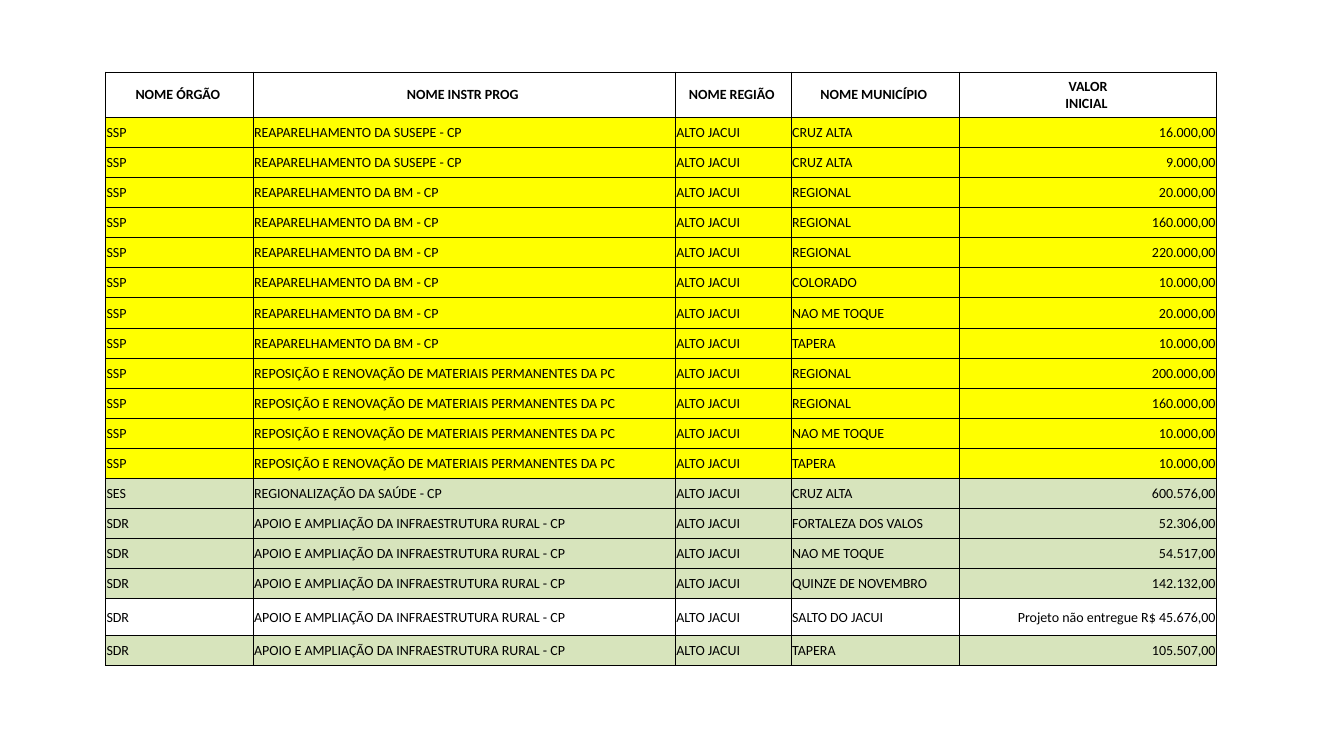
"""Builds a slide with the regional budget table of Alto Jacui."""
from dataclasses import dataclass

from lxml.etree import SubElement
from pptx import Presentation
from pptx.dml.color import RGBColor as Color
from pptx.enum.text import MSO_ANCHOR as Anchor, PP_ALIGN as Align
from pptx.oxml.ns import qn
from pptx.util import Pt


@dataclass(frozen=True)
class Theme:
    font: str = "Calibri"
    text_size: float = 10
    border_width: float = 0.5
    cell_margin: float = 0.7
    ink: str = "000000"
    security: str = "FFFF00"
    approved: str = "D7E4BC"


THEME = Theme()
REGION = "ALTO JACUI"
PRISONS = "REAPARELHAMENTO DA SUSEPE - CP"
BRIGADE = "REAPARELHAMENTO DA BM - CP"
POLICE = "REPOSIÇÃO E RENOVAÇÃO DE MATERIAIS PERMANENTES DA PC"
HEALTH = "REGIONALIZAÇÃO DA SAÚDE - CP"
RURAL = "APOIO E AMPLIAÇÃO DA INFRAESTRUTURA RURAL - CP"

HEADER = ["NOME ÓRGÃO ", "NOME INSTR PROG ", "NOME REGIÃO ",
          "NOME MUNICÍPIO ", "VALOR\vINICIAL "]
GROUPS = [
    ("SSP", PRISONS, THEME.security, [
        ("CRUZ ALTA", "16.000,00"), ("CRUZ ALTA", "9.000,00")]),
    ("SSP", BRIGADE, THEME.security, [
        ("REGIONAL", "20.000,00"), ("REGIONAL", "160.000,00"),
        ("REGIONAL", "220.000,00"), ("COLORADO", "10.000,00"),
        ("NAO ME TOQUE", "20.000,00"), ("TAPERA", "10.000,00")]),
    ("SSP", POLICE, THEME.security, [
        ("REGIONAL", "200.000,00"), ("REGIONAL", "160.000,00"),
        ("NAO ME TOQUE", "10.000,00"), ("TAPERA", "10.000,00")]),
    ("SES", HEALTH, THEME.approved, [("CRUZ ALTA", "600.576,00")]),
    ("SDR", RURAL, THEME.approved, [
        ("FORTALEZA DOS VALOS", "52.306,00"), ("NAO ME TOQUE", "54.517,00"),
        ("QUINZE DE NOVEMBRO", "142.132,00")]),
    ("SDR", RURAL, None, [
        ("SALTO DO JACUI", "Projeto não entregue R$ 45.676,00")]),
    ("SDR", RURAL, THEME.approved, [("TAPERA", "105.507,00")]),
]
COLUMN_WIDTHS = [105.5, 301.5, 82.8, 120.2, 183.5]
HEADER_HEIGHT, ROW_HEIGHT, PENDING_HEIGHT = 32.4, 21.5, 26.5


class SlideBuilder:
    def __init__(self, slide, theme):
        self.slide = slide
        self.theme = theme

    def add_table(self, left, top, widths, heights):
        frame = self.slide.shapes.add_table(
            len(heights), len(widths), Pt(left), Pt(top),
            Pt(sum(widths)), Pt(sum(heights)))
        table = frame.table
        table.first_row = table.horz_banding = False
        for column, width in zip(table.columns, widths):
            column.width = Pt(width)
        for row, height in zip(table.rows, heights):
            row.height = Pt(height)
        return table

    def add_borders(self, cell):
        properties = cell._tc.get_or_add_tcPr()
        for side in ("lnL", "lnR", "lnT", "lnB"):
            line = SubElement(properties, qn(f"a:{side}"),
                              w=str(Pt(self.theme.border_width)))
            fill = SubElement(line, qn("a:solidFill"))
            SubElement(fill, qn("a:srgbClr"), val=self.theme.ink)

    def fill_cell(self, cell, text, align, fill=None, bold=False):
        theme = self.theme
        cell.margin_left = cell.margin_right = cell.margin_top = Pt(theme.cell_margin)
        cell.margin_bottom = Pt(0)
        cell.vertical_anchor = Anchor.MIDDLE
        self.add_borders(cell)
        if fill:
            cell.fill.solid()
            cell.fill.fore_color.rgb = Color.from_string(fill)
        else:
            cell.fill.background()
        paragraph = cell.text_frame.paragraphs[0]
        paragraph.text = text
        paragraph.alignment = align
        for run in paragraph.runs:
            run.font.name = theme.font
            run.font.size = Pt(theme.text_size)
            run.font.bold = bold
            run.font.color.rgb = Color.from_string(theme.ink)
        for line_break in paragraph._p.findall(qn("a:br")):
            SubElement(line_break, qn("a:rPr"), sz=str(int(theme.text_size * 100)))


def main():
    presentation = Presentation()
    presentation.slide_width, presentation.slide_height = Pt(960), Pt(540)
    slide = presentation.slides.add_slide(presentation.slide_layouts[6])
    builder = SlideBuilder(slide, THEME)

    records = [([agency, program, REGION, town, amount], fill)
               for agency, program, fill, entries in GROUPS
               for town, amount in entries]
    heights = [HEADER_HEIGHT] + [ROW_HEIGHT if fill else PENDING_HEIGHT
                                 for _, fill in records]
    table = builder.add_table(75.4, 51.4, COLUMN_WIDTHS, heights)

    for column, title in enumerate(HEADER):
        builder.fill_cell(table.cell(0, column), title, Align.CENTER, bold=True)
    alignments = [Align.LEFT] * 4 + [Align.RIGHT]
    for row, (values, fill) in enumerate(records, start=1):
        for column, (value, align) in enumerate(zip(values, alignments)):
            builder.fill_cell(table.cell(row, column), value, align, fill)

    presentation.save("out.pptx")


if __name__ == "__main__":
    main()
